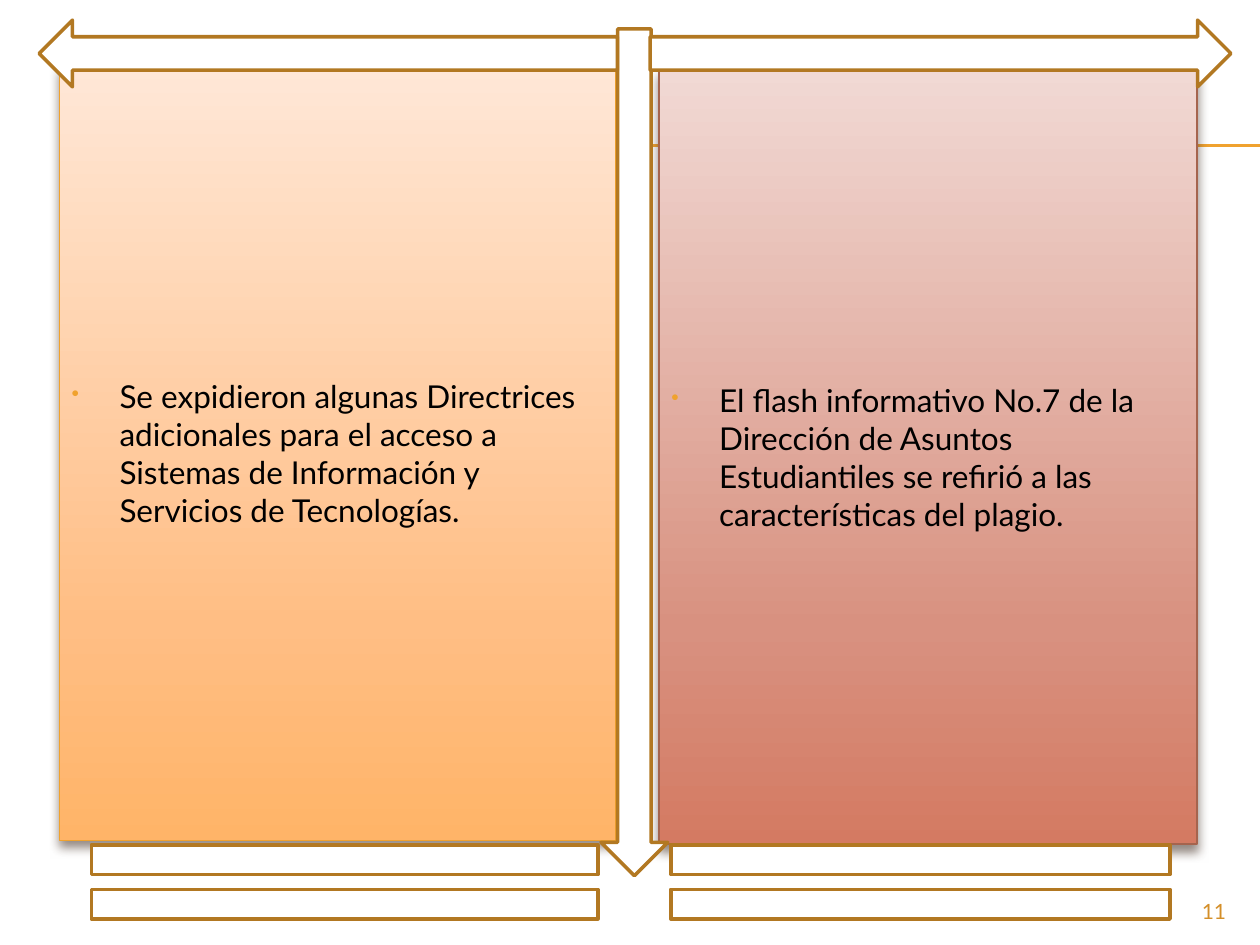
from lxml import etree
from pptx import Presentation
from pptx.dml.color import RGBColor
from pptx.enum.shapes import MSO_CONNECTOR, MSO_SHAPE
from pptx.enum.text import MSO_ANCHOR, PP_ALIGN
from pptx.oxml import parse_xml
from pptx.oxml.ns import nsdecls, qn
from pptx.util import Inches, Pt

STRAIGHT = MSO_CONNECTOR.STRAIGHT
RECTANGLE = MSO_SHAPE.RECTANGLE
DOWN_ARROW = MSO_SHAPE.DOWN_ARROW
RIGHT_ARROW = MSO_SHAPE.RIGHT_ARROW
LEFT_ARROW = MSO_SHAPE.LEFT_ARROW
EQUAL_SIGN = MSO_SHAPE.MATH_EQUAL
MIDDLE = MSO_ANCHOR.MIDDLE
LEFT, RIGHT = PP_ALIGN.LEFT, PP_ALIGN.RIGHT

FONT = "Lato"
COLORS = {
    "white": "FFFFFF",
    "text": "000000",
    "accent": "F0A22E",
    "outline": "B27822",
    "brick": "A5644E",
    "shadow": "4E3B30",
    "number": "D48F29",
}
ORANGE_STOPS = [(0, "FFE7D7"), (72, "FFBE84"), (100, "FFB468")]
BRICK_STOPS = [(0, "F1D9D4"), (72, "D89180"), (100, "D47A62")]

PANELS = [
    ((0.47, 0.52, 4.42, 6.15), ORANGE_STOPS, "accent",
     "Se expidieron algunas Directrices adicionales para el acceso a "
     "Sistemas de Información y Servicios de Tecnologías."),
    ((5.23, 0.55, 4.27, 6.15), BRICK_STOPS, "brick",
     "El flash informativo No.7 de la Dirección de Asuntos Estudiantiles "
     "se refirió a las características del plagio."),
]
FRAME_PARTS = [
    (DOWN_ARROW, (4.77, 0.23, 0.53, 6.72)),
    (RIGHT_ARROW, (5.16, 0.16, 4.61, 0.53)),
    (LEFT_ARROW, (0.31, 0.16, 4.59, 0.53)),
    (EQUAL_SIGN, (0, 6.5, 5.47, 1)),
    (EQUAL_SIGN, (4.61, 6.5, 5.39, 1)),
]


def rgb(name):
    """Return the palette colour with the given name."""
    return RGBColor.from_string(COLORS[name])


def add_outlined(page, kind, box, line_color, line_width):
    """Add a preset shape without shadow and with a coloured outline."""
    shape = page.shapes.add_shape(kind, *map(Inches, box))
    shape.shadow.inherit = False
    shape.line.color.rgb = rgb(line_color)
    shape.line.width = Pt(line_width)
    return shape


def write_span(para, text, size, color):
    """Add one run of text to a paragraph."""
    span = para.add_run()
    span.text = text
    formats = {"name": FONT, "size": Pt(size)}
    for name, value in formats.items():
        setattr(span.font, name, value)
    span.font.color.rgb = rgb(color)


def set_gradient(shape, stops):
    """Fill a shape with a gradient running from top to bottom."""
    shape.fill.gradient()
    gradient = shape.fill._xPr.find(qn("a:gradFill"))
    for child in list(gradient):
        gradient.remove(child)
    stop_list = etree.SubElement(gradient, qn("a:gsLst"))
    for position, color in stops:
        stop = etree.SubElement(stop_list, qn("a:gs"), pos=str(position * 1000))
        etree.SubElement(stop, qn("a:srgbClr"), val=color)
    etree.SubElement(gradient, qn("a:lin"), ang="5400000", scaled="0")


def set_shadow(shape):
    """Cast a soft shadow below a shape."""
    effects = shape.fill._xPr.find(qn("a:effectLst"))
    effects.append(parse_xml(
        f'<a:outerShdw {nsdecls("a")} blurRad="{Pt(6)}" dist="{Pt(4)}" '
        f'dir="5400000" rotWithShape="0"><a:srgbClr val="{COLORS["shadow"]}">'
        '<a:alpha val="60000"/></a:srgbClr></a:outerShdw>'))


def set_bullet(para):
    """Give a paragraph a small coloured bullet with a hanging indent."""
    properties = para._p.get_or_add_pPr()
    indent = Inches(0.38)
    properties.set("marL", str(indent))
    properties.set("indent", str(-indent))
    color = etree.SubElement(properties, qn("a:buClr"))
    etree.SubElement(color, qn("a:srgbClr"), val=COLORS["accent"])
    etree.SubElement(properties, qn("a:buSzPct"), val="70000")
    etree.SubElement(properties, qn("a:buChar"), char="•")


def add_rule(page, box):
    """Draw the double horizontal rule across the given box."""
    left, top, width, height = box
    for level in (top, top + height):
        rule = page.shapes.add_connector(
            STRAIGHT, Inches(left), Inches(level), Inches(left + width), Inches(level))
        rule.line.color.rgb = rgb("accent")
        rule.line.width = Pt(0.75)
        etree.SubElement(rule.line._get_or_add_ln().getparent(), qn("a:effectLst"))


def add_panel(page, box, stops, line_color, text):
    """Add a gradient panel with one bulleted statement."""
    panel = add_outlined(page, RECTANGLE, box, line_color, 0.79)
    set_gradient(panel, stops)
    set_shadow(panel)
    frame = panel.text_frame
    frame.word_wrap = True
    frame.vertical_anchor = MIDDLE
    para = frame.paragraphs[0]
    para.alignment = LEFT
    para.space_before = Pt(3.6)
    set_bullet(para)
    write_span(para, text, 18, "text")


def add_frame_part(page, kind, box):
    """Add one white arrow or equal sign of the frame."""
    part = add_outlined(page, kind, box, "outline", 2)
    part.fill.solid()
    part.fill.fore_color.rgb = rgb("white")


def add_page_number(page, box, number):
    """Write the page number at the right of the box."""
    frame = page.shapes.add_textbox(*map(Inches, box)).text_frame
    frame.word_wrap = True
    para = frame.paragraphs[0]
    para.alignment = RIGHT
    write_span(para, number, 12, "number")


def main():
    """Build the slide and save the deck."""
    deck = Presentation()
    deck.slide_width, deck.slide_height = Inches(10), Inches(7.5)
    page = deck.slides.add_slide(deck.slide_layouts[6])
    add_rule(page, (0.56, 1.15, 9.44, 0.01))
    for panel in PANELS:
        add_panel(page, *panel)
    for part in FRAME_PARTS:
        add_frame_part(page, *part)
    add_page_number(page, (9, 7.08, 0.83, 0.27), "11")
    deck.save("out.pptx")


if __name__ == "__main__":
    main()
